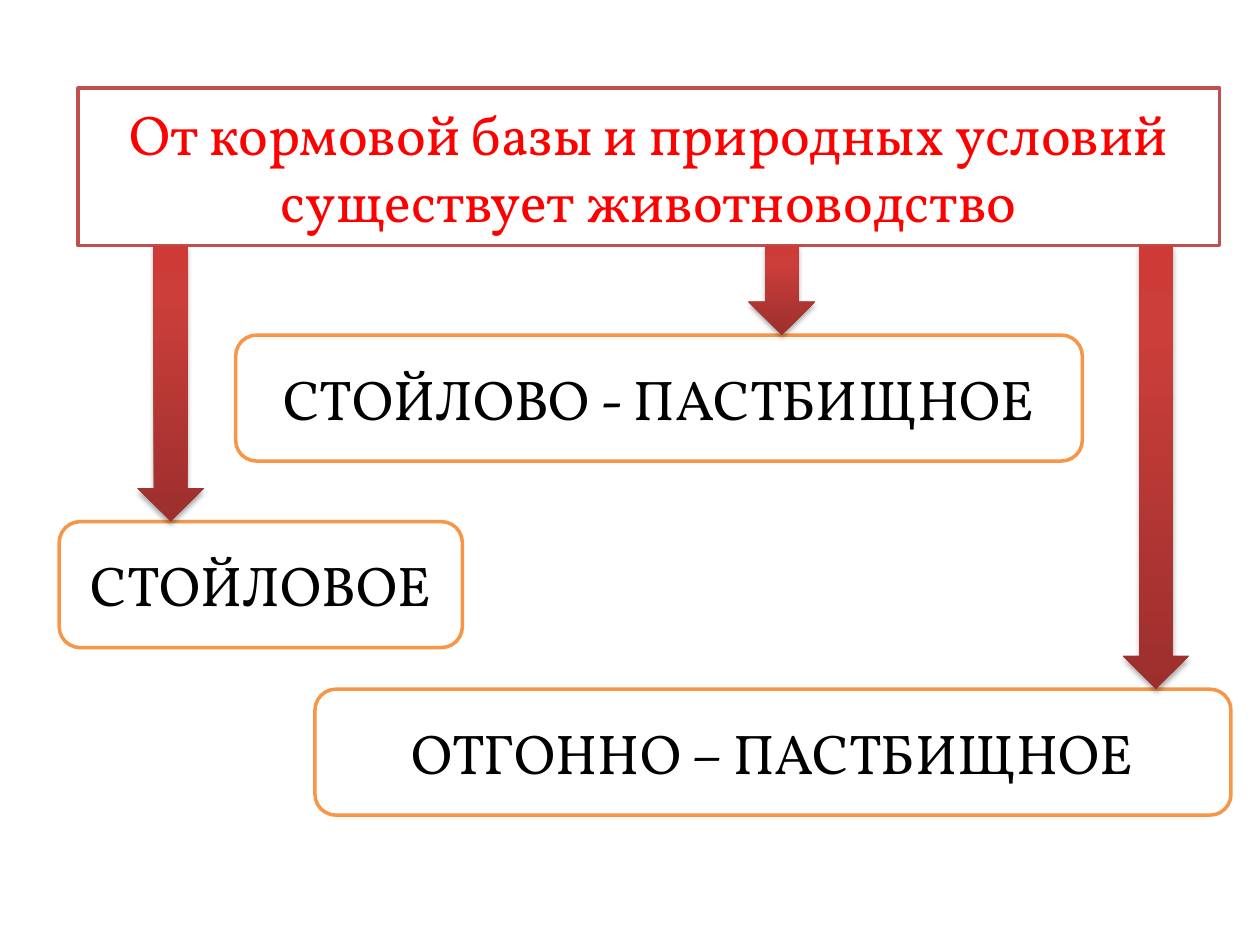
from pptx import Presentation
from pptx.dml.color import RGBColor
from pptx.enum.shapes import MSO_SHAPE
from pptx.enum.text import MSO_ANCHOR, MSO_AUTO_SIZE, PP_ALIGN
from pptx.oxml import parse_xml
from pptx.oxml.ns import nsdecls, qn
from pptx.util import Inches, Pt

FONT = "Vollkorn"
TITLE_BOX = (0.62, 0.7, 9.06, 1.25)
ARROW_WIDTH = 0.53
ARROW_STOPS = [(0, "9C2F2D"), (80, "CB3E3A"), (100, "CE3B37")]
KINDS = [
    ("СТОЙЛОВОЕ", (0.47, 4.14, 3.2, 1), 1.09),
    ("ОТГОННО – ПАСТБИЩНОЕ", (2.5, 5.47, 7.27, 1), 8.91),
    ("СТОЙЛОВО - ПАСТБИЩНОЕ", (1.87, 2.66, 6.72, 1), 5.94),
]


def rgb(value):
    """Return the colour for a hex string."""
    return RGBColor.from_string(value)


def style_box(sp, text, line, color):
    """Give a shape a white fill, an outline and centred text."""
    sp.fill.solid()
    sp.fill.fore_color.rgb = rgb("FFFFFF")
    sp.line.color.rgb = rgb(line)
    sp.line.width = Pt(2)
    tf = sp.text_frame
    tf.text = text
    tf.word_wrap = True
    tf.auto_size = MSO_AUTO_SIZE.NONE
    tf.vertical_anchor = MSO_ANCHOR.MIDDLE
    p = tf.paragraphs[0]
    p.alignment = PP_ALIGN.CENTER
    font = p.runs[0].font
    font.name = FONT
    font.size = Pt(32)
    font.color.rgb = rgb(color)


def place_title(slide, box):
    """Move the title placeholder into the box and frame it."""
    title = slide.shapes.title
    title.left, title.top, title.width, title.height = map(Inches, box)
    style_box(title, "От кормовой базы и природных условий существует животноводство",
              "C0504D", "FF0000")


def add_kind(slide, text, box):
    """Add a rounded box that names one kind of husbandry."""
    sp = slide.shapes.add_shape(MSO_SHAPE.ROUNDED_RECTANGLE, *map(Inches, box))
    sp.shadow.inherit = False
    style_box(sp, text, "F79646", "000000")


def add_arrow(slide, box):
    """Add a shaded down arrow with a soft shadow."""
    sp = slide.shapes.add_shape(MSO_SHAPE.DOWN_ARROW, *map(Inches, box))
    sp.fill.gradient()
    sp.line.fill.background()
    sp.shadow.inherit = False
    stops = "".join(f'<a:gs pos="{pos * 1000}"><a:srgbClr val="{color}"/></a:gs>'
                    for pos, color in ARROW_STOPS)
    spPr = sp._element.spPr
    spPr.replace(spPr.find(qn("a:gradFill")), parse_xml(
        f'<a:gradFill {nsdecls("a")} rotWithShape="1"><a:gsLst>{stops}</a:gsLst>'
        '<a:lin ang="16200000" scaled="0"/></a:gradFill>'))
    spPr.find(qn("a:effectLst")).append(parse_xml(
        f'<a:outerShdw {nsdecls("a")} blurRad="{Pt(3.1)}" dist="{Pt(1.8)}" '
        'dir="5400000" rotWithShape="0"><a:srgbClr val="000000">'
        '<a:alpha val="35000"/></a:srgbClr></a:outerShdw>'))


def build_slide(prs):
    """Add the slide with its title, the kinds and the arrows to them."""
    slide = prs.slides.add_slide(prs.slide_layouts[5])
    place_title(slide, TITLE_BOX)
    title_bottom = TITLE_BOX[1] + TITLE_BOX[3]
    for text, box, _ in KINDS:
        add_kind(slide, text, box)
    for _, box, left in KINDS:
        add_arrow(slide, (left, title_bottom, ARROW_WIDTH, box[1] - title_bottom))


def main():
    """Build and save the presentation."""
    prs = Presentation()
    prs.slide_width, prs.slide_height = Inches(10), Inches(7.5)
    build_slide(prs)
    prs.save("out.pptx")


if __name__ == "__main__":
    main()
